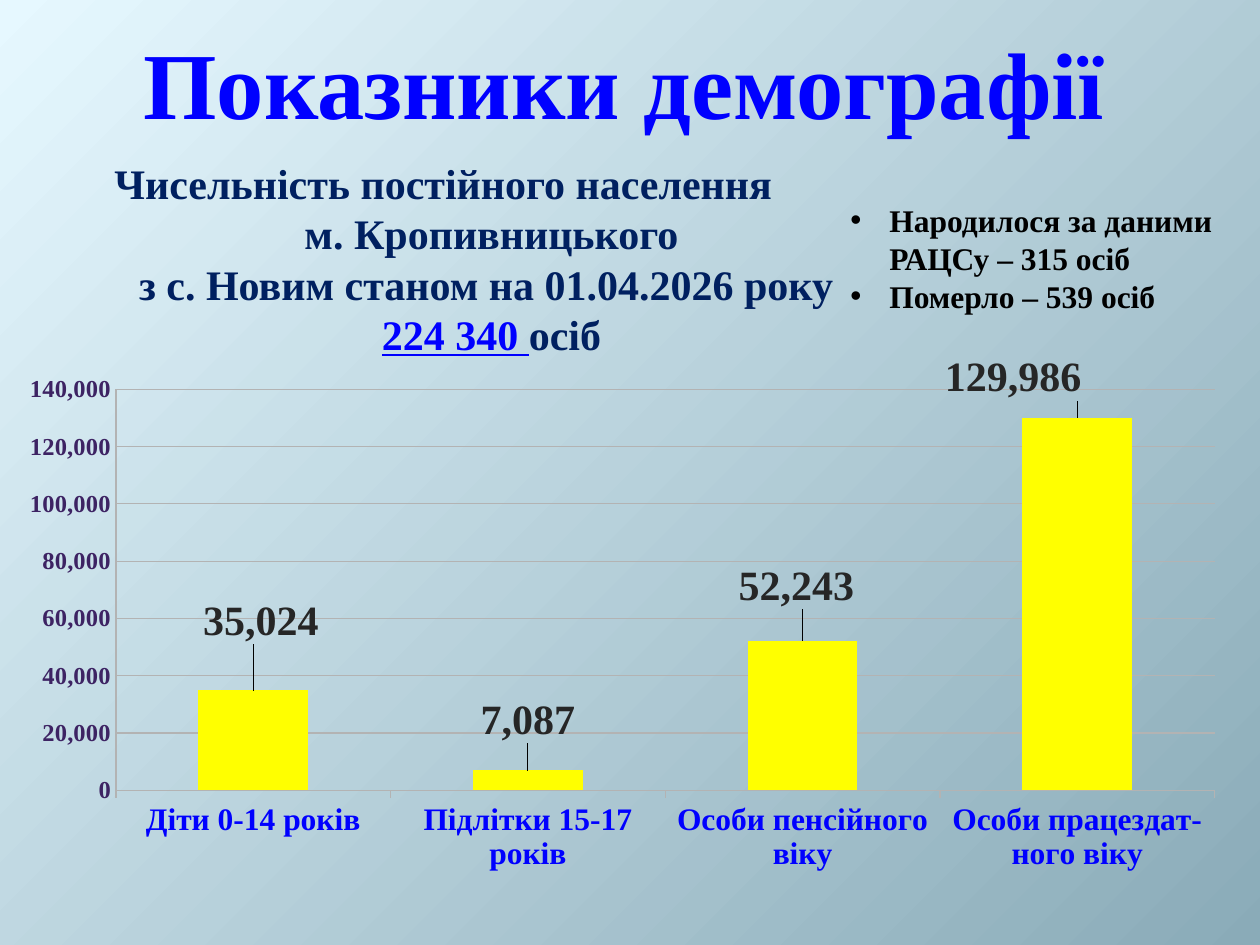
from lxml.etree import SubElement
from pptx import Presentation
from pptx.chart.data import CategoryChartData
from pptx.dml.color import RGBColor
from pptx.enum.chart import XL_CHART_TYPE, XL_LABEL_POSITION as Pos, XL_TICK_MARK as Tick
from pptx.enum.text import MSO_ANCHOR as Anchor, PP_ALIGN as Align
from pptx.oxml import parse_xml
from pptx.oxml.ns import nsdecls, qn
from pptx.util import Pt

PX = 914400 // 126
FACE = "Times New Roman"
BLUE, NAVY, GRID = "0000FF", "002060", "B3B3B3"
BACK = ["E6F8FF", "8AABB8"]

TITLE = "Показники демографії"
# text, colour, underline
COUNT = [
    [("Чисельність постійного населення", NAVY, False)],
    [("м. Кропивницького", NAVY, False)],
    [("з с. Новим станом на 01.04.2026 року ", NAVY, False)],
    [("224 340 ", BLUE, True), ("осіб", NAVY, False)],
]
EVENTS = ["Народилося за даними РАЦСу – 315 осіб", "Померло – 539 осіб"]
# group, people, label shift in px
GROUPS = [
    ("Діти 0-14 років", 35024, (8, -41)),
    ("Підлітки 15-17 років", 7087, (0, -22)),
    ("Особи пенсійного віку", 52243, (-6, -26)),
    ("Особи працездат- ного віку", 129986, (-64, -12)),
]
CHART = (0, 354, 1260, 641)
PLOT = (0.092, 0.049, 0.872, 0.63)


def px(*vals):
    return [v * PX for v in vals]


def rgb(code):
    return RGBColor.from_string(code)


def style(font, size, color, **more):
    for key, val in {"name": FACE, "size": Pt(size), "bold": True, **more}.items():
        setattr(font, key, val)
    font.fill.solid()
    font.fill.fore_color.rgb = rgb(color)


def add_box(slide, area, anchor=Anchor.TOP):
    frame = slide.shapes.add_textbox(*px(*area)).text_frame
    frame.word_wrap = True
    frame.vertical_anchor = anchor
    return frame


def add_lines(frame, lines, size, align):
    for i, line in enumerate(lines):
        para = frame.add_paragraph() if i else frame.paragraphs[0]
        para.alignment = align
        for text, color, under in line:
            run = para.add_run()
            run.text = text
            style(run.font, size, color, underline=under)


def add_layout(node, after, inner=False, **vals):
    """Place a chart part by fractions of the chart, just after a child."""
    tags = {"layoutTarget": "inner", "xMode": "edge", "yMode": "edge"} if inner else {}
    for old in node.findall(qn("c:layout")):
        node.remove(old)
    layout = parse_xml(f"<c:layout {nsdecls('c')}/>")
    manual = SubElement(layout, qn("c:manualLayout"))
    for tag, val in {**tags, **vals}.items():
        SubElement(manual, qn("c:" + tag)).set("val", str(val))
    spot = 0 if after is None else node.index(node.find(qn(after))) + 1
    node.insert(spot, layout)


def paint_back(slide):
    fill = slide.background.fill
    fill.gradient()
    for stop, color in zip(fill.gradient_stops, BACK):
        stop.color.rgb = rgb(color)
    grad = slide.element.find(".//" + qn("a:gradFill"))
    for lin in grad.findall(qn("a:lin")):
        grad.remove(lin)
    grad.append(parse_xml(
        f'<a:path {nsdecls("a")} path="circle"><a:fillToRect r="100000" b="100000"/></a:path>'))


def add_bars(slide):
    data = CategoryChartData(number_format="#,##0")
    data.categories = [name for name, _, _ in GROUPS]
    data.add_series("Series 1", [val for _, val, _ in GROUPS])
    chart = slide.shapes.add_chart(XL_CHART_TYPE.COLUMN_CLUSTERED, *px(*CHART), data).chart
    chart.has_legend = chart.has_title = False
    style(chart.font, 18, "FFFFFF", bold=False)

    cats, vals = chart.category_axis, chart.value_axis
    style(cats.tick_labels.font, 18, BLUE)
    style(vals.tick_labels.font, 14, "3D2363")
    cats.major_tick_mark, vals.major_tick_mark = Tick.OUTSIDE, Tick.NONE
    vals.minimum_scale, vals.maximum_scale, vals.major_unit = 0, 140000, 20000
    vals.tick_labels.number_format = "#,##0"
    vals.tick_labels.number_format_is_linked = False
    for line in (cats.format.line, vals.format.line, vals.major_gridlines.format.line):
        line.color.rgb = rgb(GRID)
        line.width = Pt(0.75)

    plot = chart.plots[0]
    plot.gap_width = 150
    plot.vary_by_categories = False
    bars = plot.series[0]
    bars.format.fill.solid()
    bars.format.fill.fore_color.rgb = rgb("FFFF00")
    labels = bars.data_labels
    labels.show_value = True
    labels.number_format, labels.number_format_is_linked = "#,##0", False
    style(labels.font, 24, "262626")
    for i, (_, _, (dx, dy)) in enumerate(GROUPS):
        label = bars.points[i].data_label
        style(label.font, 24, "262626")
        label.position = Pos.OUTSIDE_END
        node = labels._element.findall(qn("c:dLbl"))[i]
        add_layout(node, "c:idx", x=round(dx / CHART[2], 3), y=round(dy / CHART[3], 3))
    area = chart._chartSpace.find(".//" + qn("c:plotArea"))
    add_layout(area, None, True, **dict(zip("xywh", PLOT)))


def main():
    deck = Presentation()
    deck.slide_width, deck.slide_height = px(1260, 945)
    slide = deck.slides.add_slide(deck.slide_layouts[6])
    paint_back(slide)

    head = add_box(slide, (-6, 0, 1260, 145), Anchor.BOTTOM)
    add_lines(head, [[(TITLE, BLUE, False)]], 54, Align.CENTER)

    count = add_box(slide, (82, 151, 819, 258))
    add_lines(count, COUNT, 24, Align.CENTER)
    first = count.paragraphs[0]
    first.alignment = Align.LEFT
    first._p.get_or_add_pPr().set("marL", str(20 * PX))

    add_bars(slide)

    events = add_box(slide, (838, 195, 416, 127))
    add_lines(events, [[(text, "000000", False)] for text in EVENTS], 18, Align.LEFT)
    for para in events.paragraphs:
        props = para._p.get_or_add_pPr()
        props.set("marL", str(39 * PX))
        props.set("indent", str(-39 * PX))
        SubElement(props, qn("a:buFont")).set("typeface", "Arial")
        SubElement(props, qn("a:buChar")).set("char", "•")

    deck.save("out.pptx")


if __name__ == "__main__":
    main()
